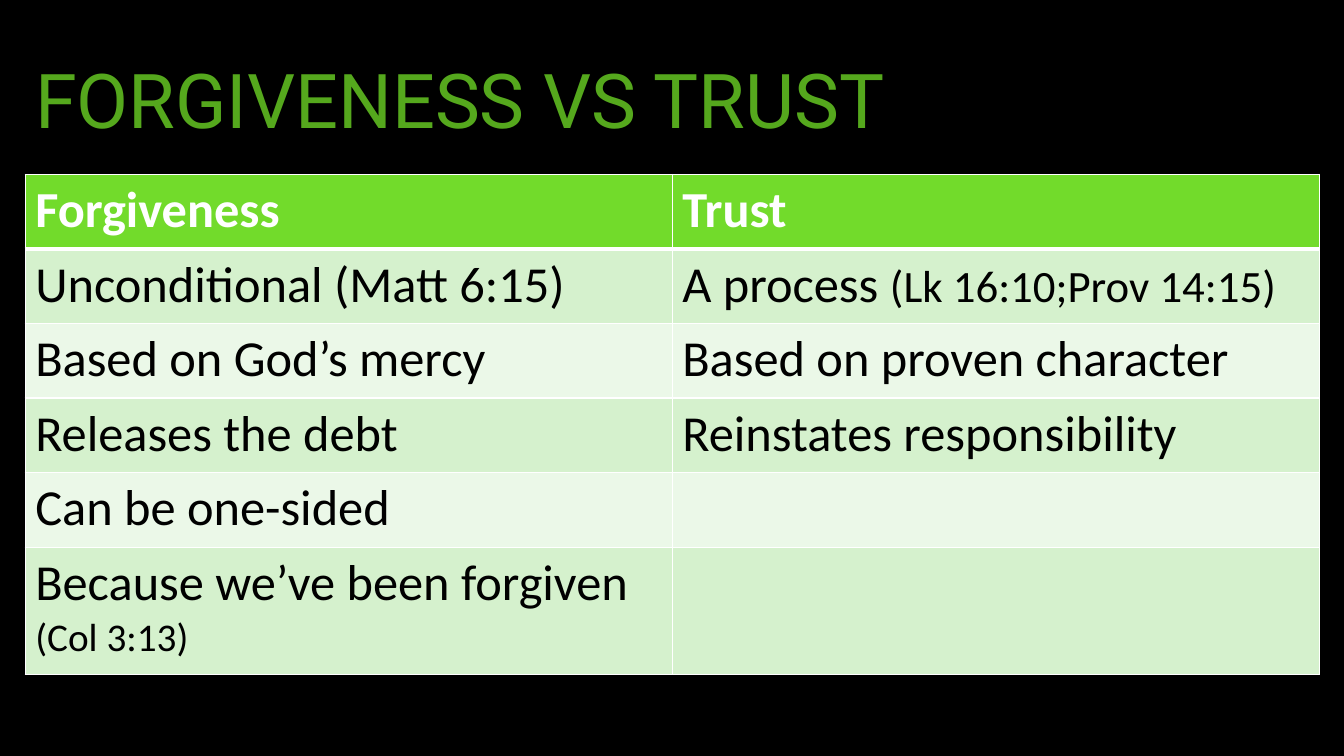
import pptx
import pptx.dml.color
import pptx.enum.text
import pptx.oxml
import pptx.oxml.ns
import pptx.util
from pptx.util import Pt

COLORS = {
    "background": "000000",
    "title": "55A81D",
    "header": "72DB2B",
    "odd_row": "D5F1CD",
    "even_row": "EBF8E8",
    "border": "FFFFFF",
    "header_text": "FFFFFF",
    "body_text": "000000",
}

# Each cell is a list of (text, size) runs
ROWS = [
    [[("Forgiveness", 36)], [("Trust", 36)]],
    [[("Unconditional (Matt 6:15)", 36)],
     [("A process ", 36), ("(Lk 16:10;Prov 14:15)", 32)]],
    [[("Based on God’s mercy", 36)], [("Based on proven character", 36)]],
    [[("Releases the debt", 36)], [("Reinstates responsibility", 36)]],
    [[("Can be one-sided", 36)], []],
    [[("Because we’ve been forgiven ", 36), ("(Col 3:13)", 28)], []],
]
ROW_HEIGHT = 53.28


def color(name):
    return pptx.dml.color.RGBColor.from_string(COLORS[name])


def add_run(paragraph, text, color_name, **formats):
    run = paragraph.add_run()
    run.text = text
    for name, value in formats.items():
        setattr(run.font, name, value)
    run.font.color.rgb = color(color_name)


def add_title(slide, left, top, width, height):
    shape = slide.shapes.add_textbox(Pt(left), Pt(top), Pt(width), Pt(height))
    frame = shape.text_frame
    frame.word_wrap = True
    frame.vertical_anchor = pptx.enum.text.MSO_ANCHOR.MIDDLE
    paragraph = frame.paragraphs[0]
    paragraph.line_spacing = 0.9
    add_run(paragraph, "FORGIVENESS VS TRUST", "title", name="Roboto", size=Pt(54))


def set_borders(cell, widths):
    properties = cell._tc.get_or_add_tcPr()
    for side, width in widths.items():
        properties.append(pptx.oxml.parse_xml(
            f'<a:ln{side} {pptx.oxml.ns.nsdecls("a")} w="{Pt(width)}">'
            f'<a:solidFill><a:srgbClr val="{COLORS["border"]}"/></a:solidFill>'
            f'</a:ln{side}>'))


def add_comparison(slide, left, top, width, height):
    table = slide.shapes.add_table(
        len(ROWS), 2, Pt(left), Pt(top), Pt(width), Pt(height)).table
    for column in table.columns:
        column.width = Pt(width / 2)
    for row in table.rows:
        row.height = Pt(ROW_HEIGHT)
    # The last row takes the remaining height
    table.rows[len(ROWS) - 1].height = Pt(height - ROW_HEIGHT * (len(ROWS) - 1))

    for row_index, row_cells in enumerate(ROWS):
        is_header = row_index == 0
        band = "header" if is_header else "odd_row" if row_index % 2 else "even_row"
        for column_index, runs in enumerate(row_cells):
            cell = table.cell(row_index, column_index)
            # A thick rule separates the header from the body
            set_borders(cell, {"L": 1, "R": 1, "T": 3 if row_index == 1 else 1,
                               "B": 3 if is_header else 1})
            cell.fill.solid()
            cell.fill.fore_color.rgb = color(band)
            for text, size in runs:
                add_run(cell.text_frame.paragraphs[0], text,
                        "header_text" if is_header else "body_text",
                        name="Calibri", size=Pt(size), bold=is_header)


def main():
    presentation = pptx.Presentation()
    presentation.slide_width = Pt(960)
    presentation.slide_height = Pt(540)
    slide = presentation.slides.add_slide(presentation.slide_layouts[6])
    slide.background.fill.solid()
    slide.background.fill.fore_color.rgb = color("background")
    add_title(slide, 18, 15.84, 928.8, 116.64)
    add_comparison(slide, 18, 124.56, 924.48, 357.12)
    presentation.save("out.pptx")


if __name__ == "__main__":
    main()
